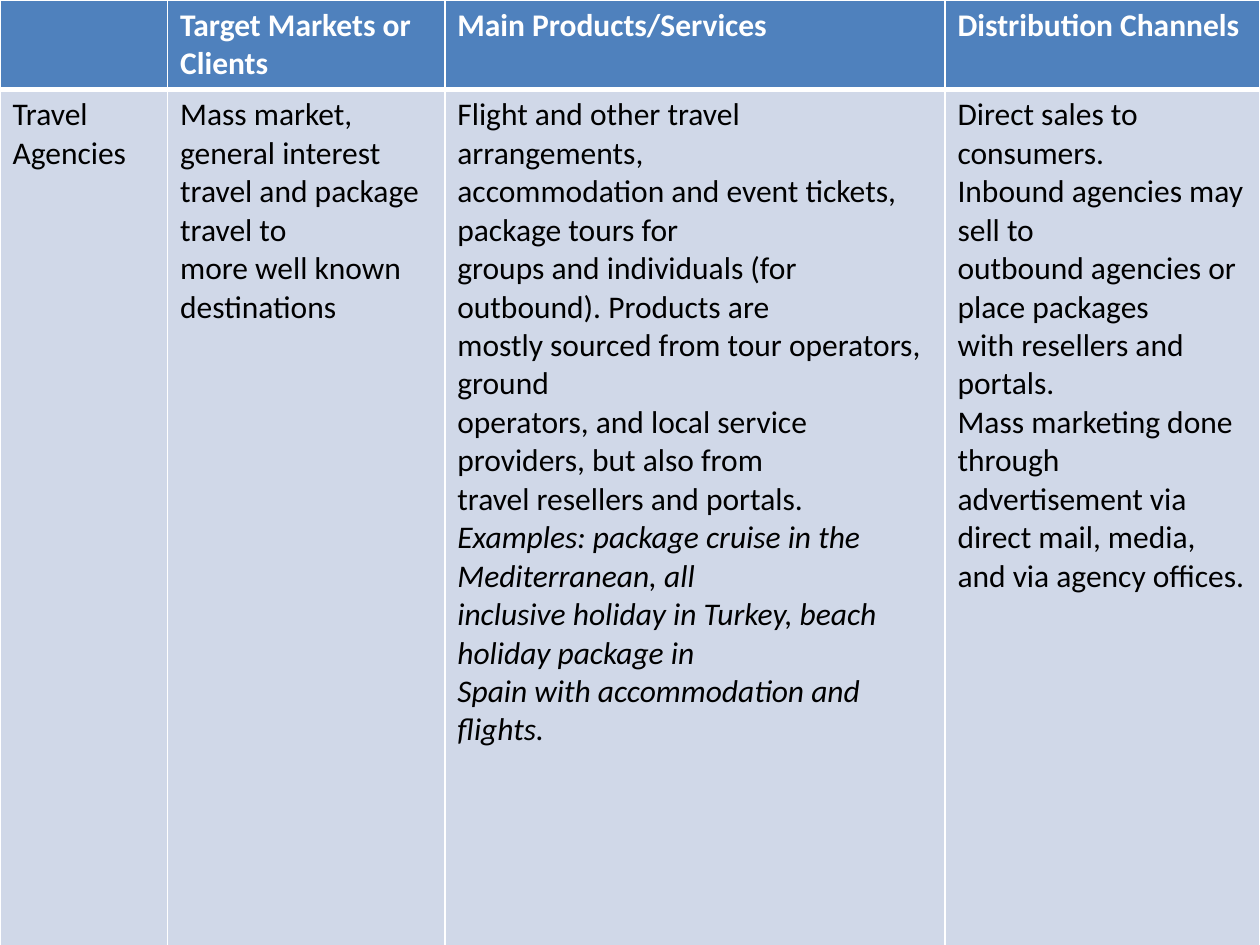
from lxml import etree
from pptx import Presentation
from pptx.dml.color import RGBColor
from pptx.oxml.ns import qn
from pptx.util import Inches, Pt

BLANK_LAYOUT = 6
COLUMN_WIDTHS = [1.33, 2.2, 3.97, 2.5]
ROW_HEIGHTS = [0.7, 7.49]
HEADER_STYLE = {
    "fill": "4F81BD",
    "font": {"size": Pt(18), "name": "Calibri", "bold": True},
    "color": "FFFFFF",
    "borders": {"lnL": 1, "lnR": 1, "lnT": 1, "lnB": 3},
}
BODY_STYLE = {
    "fill": "D0D8E8",
    "font": {"size": Pt(18), "name": "Calibri", "bold": False},
    "color": "000000",
    "borders": {"lnL": 1, "lnR": 1, "lnT": 3, "lnB": 1},
}
HEADERS = [
    [],
    ["Target Markets or Clients"],
    ["Main Products/Services"],
    ["Distribution Channels"],
]
TRAVEL_AGENCIES = [
    ["Travel Agencies"],
    [
        "Mass market, general interest",
        "travel and package travel to",
        "more well known destinations",
    ],
    [
        "Flight and other travel arrangements,",
        "accommodation and event tickets, package tours for",
        "groups and individuals (for outbound). Products are",
        "mostly sourced from tour operators, ground",
        "operators, and local service providers, but also from",
        "travel resellers and portals.",
    ],
    [
        "Direct sales to consumers.",
        "Inbound agencies may sell to",
        "outbound agencies or place packages",
        "with resellers and portals.",
        "Mass marketing done through",
        "advertisement via direct mail, media,",
        "and via agency offices.",
    ],
]
PRODUCT_EXAMPLES = [
    "Examples: package cruise in the Mediterranean, all",
    "inclusive holiday in Turkey, beach holiday package in",
    "Spain with accommodation and flights.",
]
PRODUCTS_COLUMN = 2


def set_color(color_owner, value):
    color_owner.rgb = RGBColor.from_string(value)


def set_borders(cell, widths, color="FFFFFF"):
    properties = cell._tc.get_or_add_tcPr()
    for side, width in widths.items():
        line = etree.SubElement(properties, qn(f"a:{side}"), w=str(Pt(width)))
        fill = etree.SubElement(line, qn("a:solidFill"))
        etree.SubElement(fill, qn("a:srgbClr"), val=color)


def add_lines(cell, lines, style, italic=False):
    text_frame = cell.text_frame
    for line in lines:
        is_first = not text_frame.text
        paragraph = text_frame.paragraphs[0] if is_first else text_frame.add_paragraph()
        run = paragraph.add_run()
        run.text = line
        for name, value in style["font"].items():
            setattr(run.font, name, value)
        run.font.italic = italic
        set_color(run.font.color, style["color"])


def format_cell(cell, style):
    set_borders(cell, style["borders"])
    cell.fill.solid()
    set_color(cell.fill.fore_color, style["fill"])


def add_agency_table(slide, left, top, width, height):
    rows = [(HEADERS, HEADER_STYLE), (TRAVEL_AGENCIES, BODY_STYLE)]
    table = slide.shapes.add_table(
        len(rows), len(COLUMN_WIDTHS), left, top, width, height
    ).table
    for column, column_width in zip(table.columns, COLUMN_WIDTHS):
        column.width = int(width * column_width / sum(COLUMN_WIDTHS))
    for row, row_height in zip(table.rows, ROW_HEIGHTS):
        row.height = int(height * row_height / sum(ROW_HEIGHTS))
    for row, (texts, style) in zip(table.rows, rows):
        for cell, lines in zip(row.cells, texts):
            format_cell(cell, style)
            add_lines(cell, lines, style)
    add_lines(table.cell(1, PRODUCTS_COLUMN), PRODUCT_EXAMPLES, BODY_STYLE, italic=True)


def main():
    presentation = Presentation()
    presentation.slide_width = Inches(10)
    presentation.slide_height = Inches(7.5)
    slide = presentation.slides.add_slide(presentation.slide_layouts[BLANK_LAYOUT])
    add_agency_table(slide, Inches(0), Inches(0), Inches(10), Inches(8.19))
    presentation.save("out.pptx")


if __name__ == "__main__":
    main()
